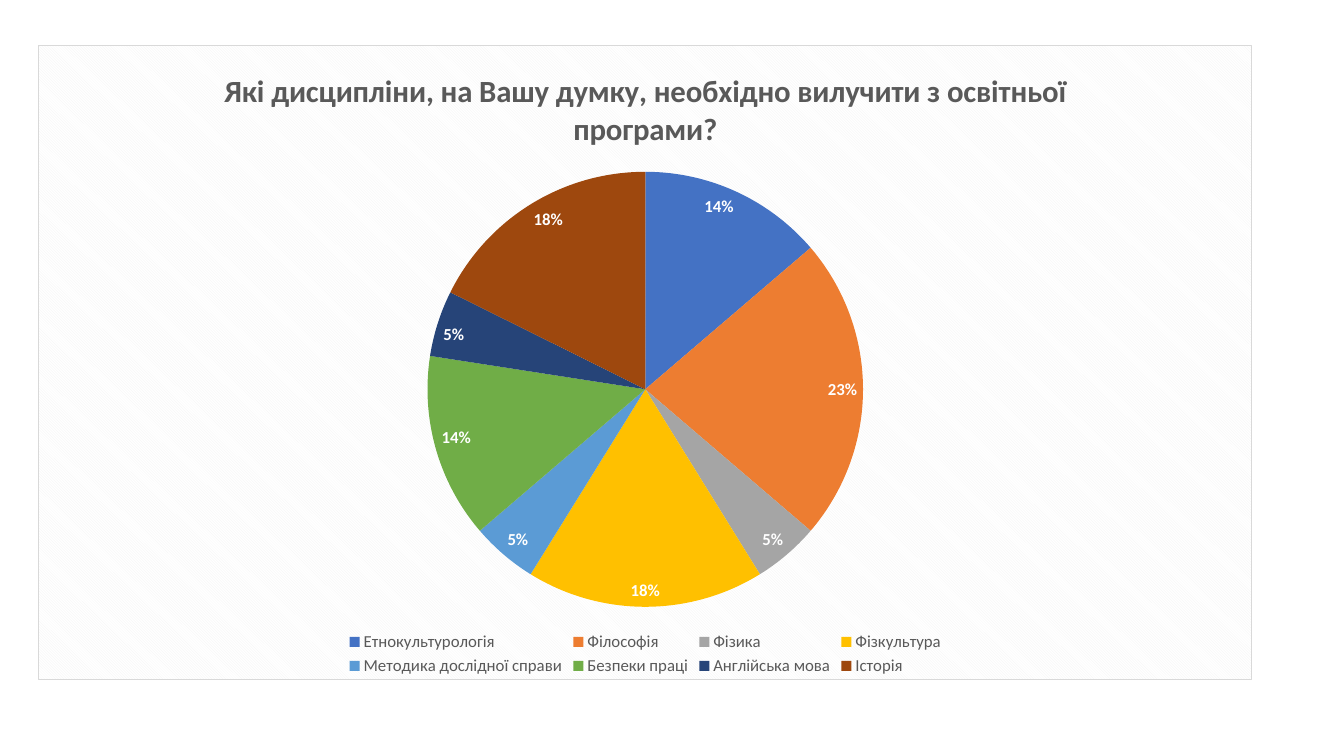
from lxml import etree
from pptx import Presentation
from pptx import util as u
from pptx.chart.data import CategoryChartData
from pptx.dml.color import RGBColor
from pptx.enum import chart as ch
from pptx.oxml import ns

FONT = "Calibri"
GREY = RGBColor(0x59, 0x59, 0x59)
WHITE = RGBColor(0xFF, 0xFF, 0xFF)
BLACK = RGBColor(0, 0, 0)
HATCH = RGBColor(0xF2, 0xF2, 0xF2)
BORDER = RGBColor(0xD9, 0xD9, 0xD9)

QUESTION = "Які дисципліни, на Вашу думку, необхідно вилучити з освітньої програми?"
SUBJECTS = [
    ("Етнокультурологія", 14, RGBColor(0x44, 0x72, 0xC4)),
    ("Філософія", 23, RGBColor(0xED, 0x7D, 0x31)),
    ("Фізика", 5, RGBColor(0xA5, 0xA5, 0xA5)),
    ("Фізкультура", 18, RGBColor(0xFF, 0xC0, 0x00)),
    ("Методика дослідної справи", 5, RGBColor(0x5B, 0x9B, 0xD5)),
    ("Безпеки праці", 14, RGBColor(0x70, 0xAD, 0x47)),
    ("Англійська мова", 5, RGBColor(0x26, 0x44, 0x78)),
    ("Історія", 18, RGBColor(0x9E, 0x48, 0x0E)),
]


def style_font(font, size, color, bold=False):
    font.name = FONT
    font.size = u.Pt(size)
    font.bold = bold
    font.color.rgb = color


def write_text(frame, text, **style):
    span = frame.paragraphs[0].add_run()
    span.text = text
    style_font(span.font, **style)


def paint_chart_area(chart):
    area = etree.fromstring(
        f'<c:spPr {ns.nsdecls("c", "a")}><a:pattFill prst="dkDnDiag">'
        f'<a:fgClr><a:srgbClr val="{HATCH}"/></a:fgClr>'
        f'<a:bgClr><a:srgbClr val="{WHITE}"/></a:bgClr></a:pattFill>'
        f'<a:ln w="{u.Pt(0.75)}"><a:solidFill><a:srgbClr val="{BORDER}"/>'
        '</a:solidFill></a:ln></c:spPr>'
    )
    chart.element.find(ns.qn("c:chart")).addnext(area)


def label_slices(plot):
    plot.has_data_labels = True
    labels = plot.data_labels
    labels.show_value = False
    labels.show_percentage = True
    labels.number_format = "0%"
    labels.number_format_is_linked = False
    labels.position = ch.XL_LABEL_POSITION.INSIDE_END
    style_font(labels.font, size=12, color=WHITE, bold=True)


def add_survey_pie(page, left, top, width, height):
    data = CategoryChartData()
    data.categories = [name for name, _, _ in SUBJECTS]
    data.add_series(QUESTION, [share for _, share, _ in SUBJECTS])
    chart = page.shapes.add_chart(
        ch.XL_CHART_TYPE.PIE, left, top, width, height, data
    ).chart
    style_font(chart.font, size=10, color=BLACK)
    paint_chart_area(chart)

    chart.has_title = True
    write_text(chart.chart_title.text_frame, QUESTION, size=22, color=GREY, bold=True)
    chart.chart_title.include_in_layout = False

    chart.has_legend = True
    chart.legend.position = ch.XL_LEGEND_POSITION.BOTTOM
    chart.legend.include_in_layout = False
    style_font(chart.legend.font, size=12, color=GREY)

    plot = chart.plots[0]
    plot.vary_by_categories = True
    for index, (_, _, color) in enumerate(SUBJECTS):
        fill = plot.series[0].points[index].format.fill
        fill.solid()
        fill.fore_color.rgb = color
    label_slices(plot)


def main():
    deck = Presentation()
    deck.slide_width = u.Inches(13.33)
    deck.slide_height = u.Inches(7.5)
    page = deck.slides.add_slide(deck.slide_layouts[6])
    add_survey_pie(page, u.Inches(0.38), u.Inches(0.45), u.Inches(12.04), u.Inches(6.3))
    deck.save("out.pptx")


if __name__ == "__main__":
    main()
